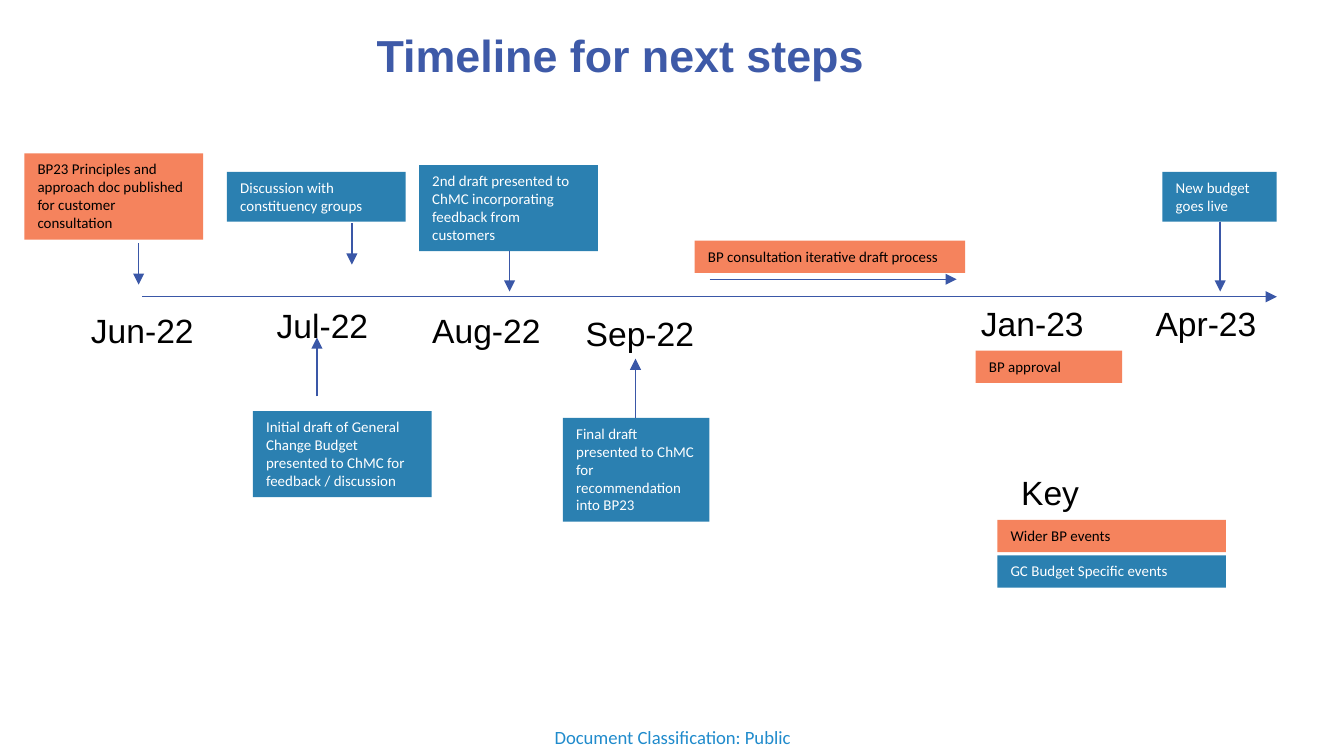
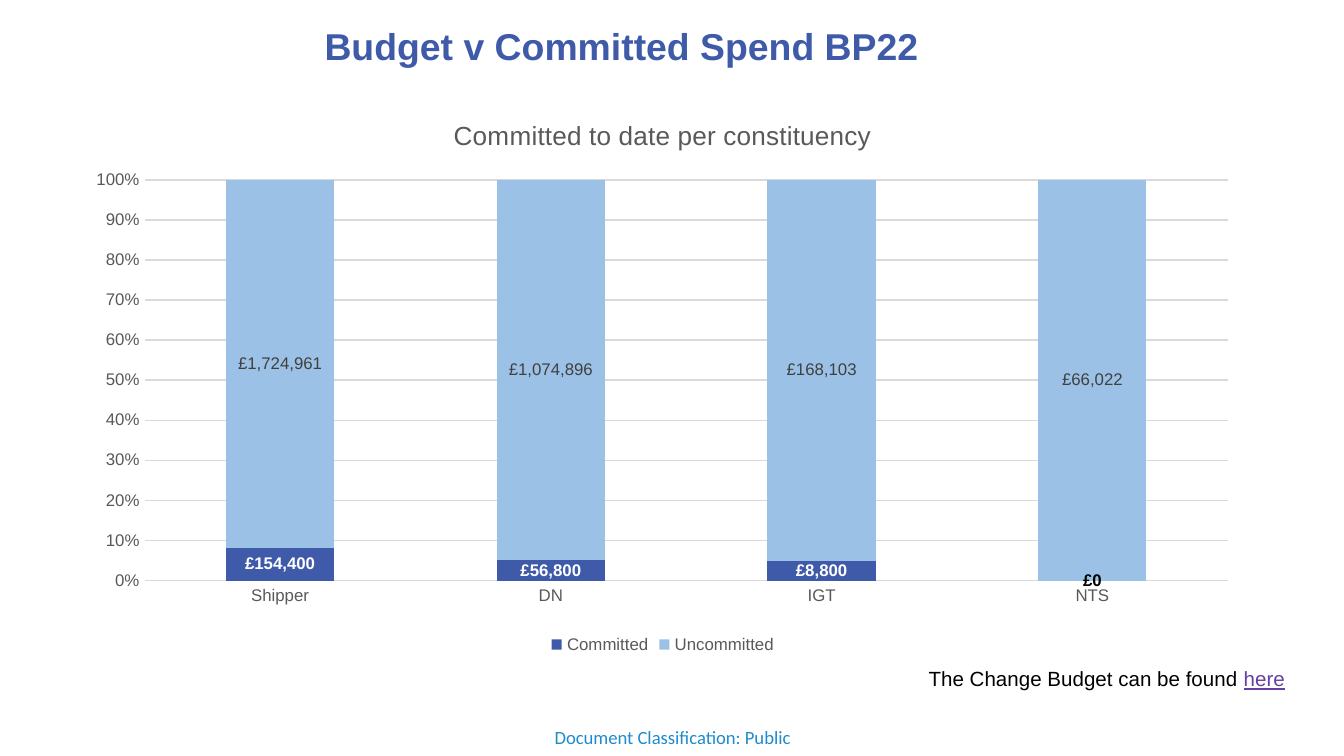
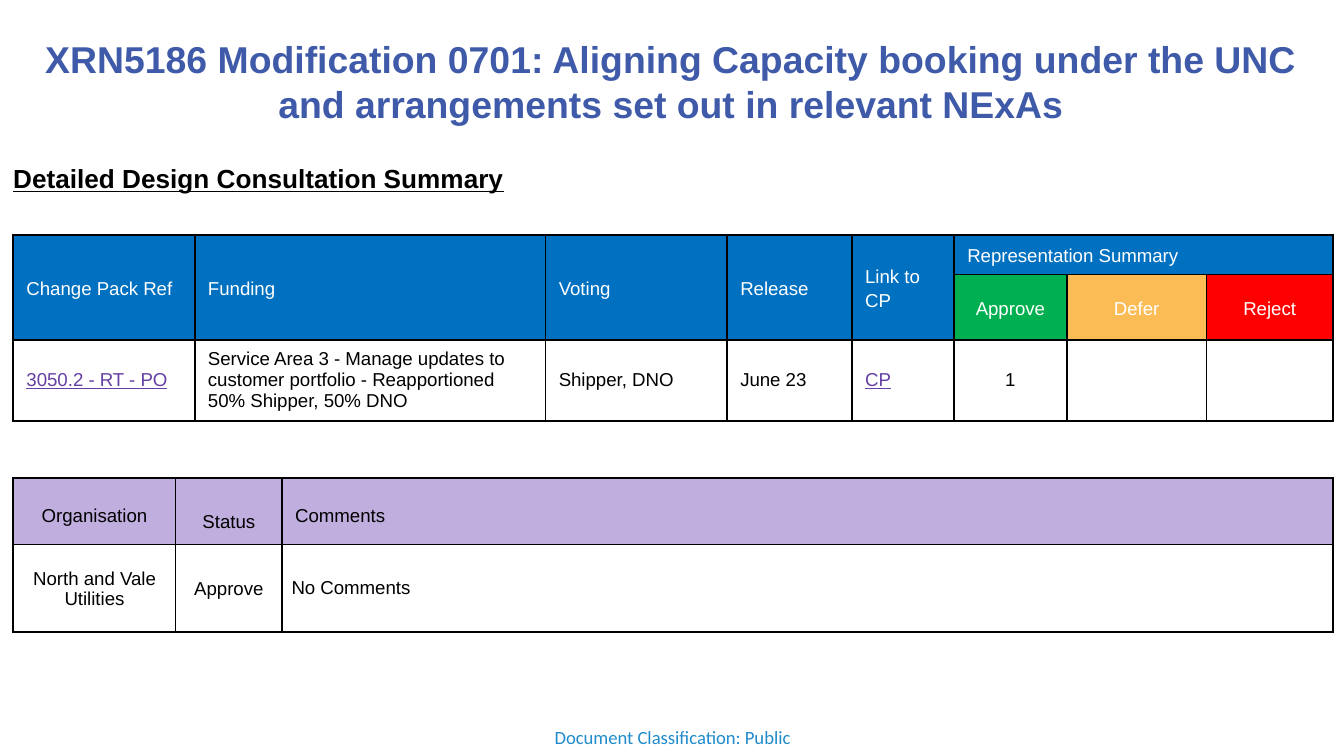
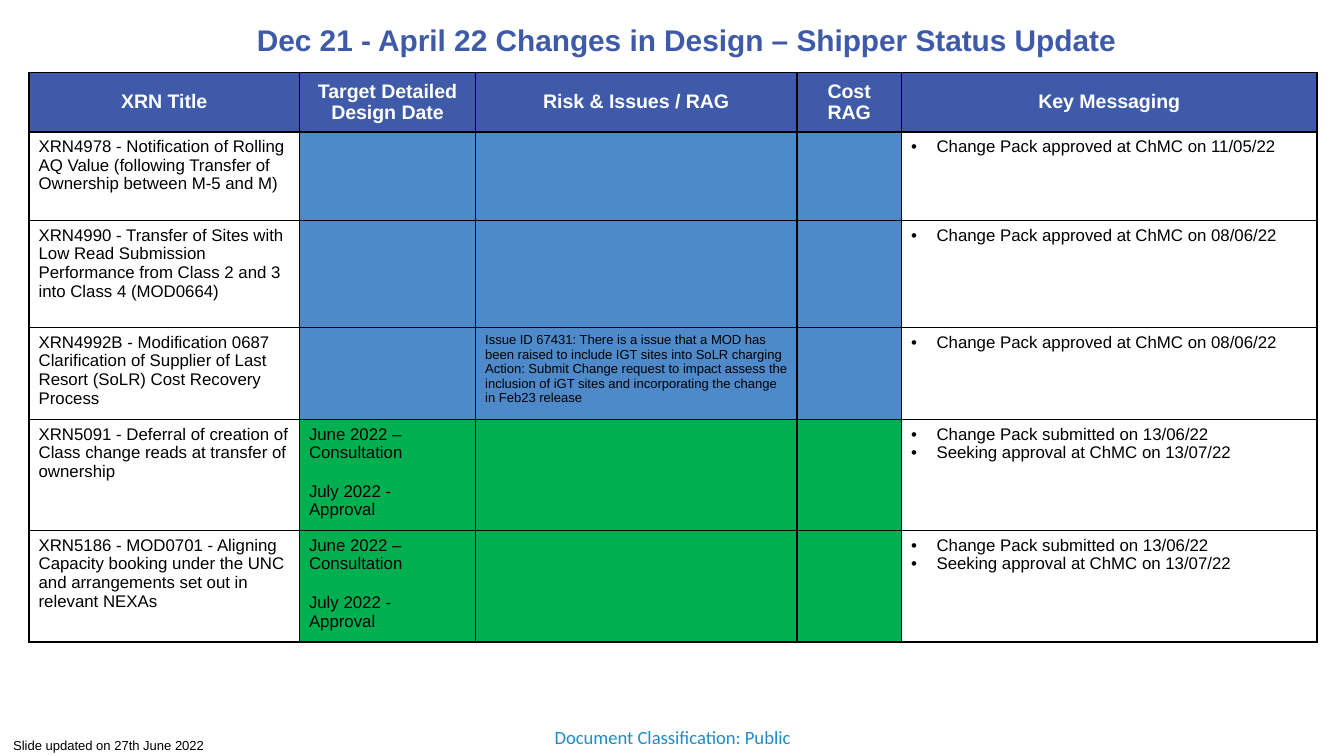
from dataclasses import dataclass, replace

from lxml.etree import SubElement
from pptx import Presentation
from pptx.chart.data import CategoryChartData
from pptx.dml.color import RGBColor
from pptx.enum.chart import XL_CHART_TYPE, XL_LEGEND_POSITION, XL_TICK_MARK
from pptx.enum.shapes import MSO_CONNECTOR, MSO_SHAPE
from pptx.enum.text import MSO_ANCHOR, PP_ALIGN
from pptx.oxml.ns import qn
from pptx.util import Cm, Pt

LEFT, CENTER = PP_ALIGN.LEFT, PP_ALIGN.CENTER
TOP, MIDDLE = MSO_ANCHOR.TOP, MSO_ANCHOR.MIDDLE
RECTANGLE = MSO_SHAPE.RECTANGLE
STRAIGHT = MSO_CONNECTOR.STRAIGHT
STACKED_100 = XL_CHART_TYPE.COLUMN_STACKED_100
LEGEND_BOTTOM = XL_LEGEND_POSITION.BOTTOM
NO_TICK = XL_TICK_MARK.NONE

ARIAL, CALIBRI = "Arial", "Calibri"
BLACK = RGBColor(0x00, 0x00, 0x00)
WHITE = RGBColor(0xFF, 0xFF, 0xFF)
NAVY = RGBColor(0x3E, 0x5A, 0xA8)
ARROW_BLUE = RGBColor(0x3A, 0x57, 0xA7)
FOOTER_BLUE = RGBColor(0x20, 0x8B, 0xCC)
WIDER_ORANGE = RGBColor(0xF5, 0x83, 0x5D)
BUDGET_BLUE = RGBColor(0x2B, 0x80, 0xB1)
PALE_BLUE = RGBColor(0x9B, 0xC2, 0xE6)
GREY = RGBColor(0x59, 0x59, 0x59)
LABEL_GREY = RGBColor(0x40, 0x40, 0x40)
GRID_GREY = RGBColor(0xD9, 0xD9, 0xD9)
LINK_PURPLE = RGBColor(0x64, 0x40, 0xA3)
HEADER_BLUE = RGBColor(0x00, 0x70, 0xC0)
GREEN = RGBColor(0x00, 0xB0, 0x50)
AMBER = RGBColor(0xFC, 0xBC, 0x55)
RED = RGBColor(0xFF, 0x00, 0x00)
LILAC = RGBColor(0xC0, 0xAE, 0xDF)
COMPLETE_BLUE = RGBColor(0x4E, 0x8A, 0xCA)

POUNDS = '"£"#,##0'


@dataclass(frozen=True)
class CellStyle:
    """The look of one table cell; margins are left, top, right, bottom in cm."""
    size: float = 10
    color: RGBColor = BLACK
    fill: RGBColor = WHITE
    bold: bool = False
    underline: bool = False
    align: PP_ALIGN = LEFT
    anchor: MSO_ANCHOR = MIDDLE
    spacing: float = 1.0
    gap: float = 0
    bullet: bool = False
    margins: tuple = (0.25, 0.13, 0.25, 0.13)


def style_font(font, size, color, bold=False, underline=False, name=ARIAL):
    """Set the usual properties of a font."""
    font.name, font.size, font.bold = name, Pt(size), bold
    font.underline = underline
    font.color.rgb = color


def write_text(text_frame, text, size, color, align=LEFT, **font_options):
    """Fill a text frame and format every run."""
    text_frame.text = text
    for paragraph in text_frame.paragraphs:
        paragraph.alignment = align
        for run in paragraph.runs:
            style_font(run.font, size, color, **font_options)


def place(left, top, width, height):
    """Turn a box in centimetres into lengths."""
    return Cm(left), Cm(top), Cm(width), Cm(height)


def add_text(slide, box, text, size, color=BLACK, wrap=True, **options):
    """Add a text box."""
    shape = slide.shapes.add_textbox(*place(*box))
    shape.text_frame.word_wrap = wrap
    write_text(shape.text_frame, text, size, color, **options)
    return shape


def add_event(slide, box, text, fill):
    """Add a filled event box with a small caption."""
    shape = slide.shapes.add_shape(RECTANGLE, *place(*box))
    shape.shadow.inherit = False
    shape.fill.solid()
    shape.fill.fore_color.rgb = fill
    shape.line.fill.background()
    shape.text_frame.vertical_anchor = TOP
    color = BLACK if fill == WIDER_ORANGE else WHITE
    write_text(shape.text_frame, text, 8, color, name=CALIBRI)


def add_arrow(slide, start_x, start_y, end_x, end_y):
    """Add a straight arrow."""
    arrow = slide.shapes.add_connector(
        STRAIGHT, Cm(start_x), Cm(start_y), Cm(end_x), Cm(end_y))
    arrow.line.color.rgb = ARROW_BLUE
    arrow.line.width = Pt(0.75)
    properties = arrow.element.spPr
    SubElement(properties.find(qn("a:ln")), qn("a:tailEnd"), type="triangle")
    SubElement(properties, qn("a:effectLst"))


def add_titled_slide(presentation, title, box, size, anchor=MIDDLE):
    """Add a slide with its title placed and formatted."""
    slide = presentation.slides.add_slide(presentation.slide_layouts[5])
    shape = slide.shapes.title
    shape.left, shape.top, shape.width, shape.height = place(*box)
    shape.text_frame.vertical_anchor = anchor
    write_text(shape.text_frame, title, size, NAVY, CENTER, bold=True)
    return slide


def move_footer_to_master(presentation, slide):
    """Make the classification footer once, on the slide master."""
    footer = add_text(slide, (10.03, 13.56, 5.36, 0.74), "Document Classification: Public",
                      10, FOOTER_BLUE, align=CENTER, name=CALIBRI)
    frame = footer.text_frame
    frame.vertical_anchor = MIDDLE
    frame.margin_left = frame.margin_top = frame.margin_right = frame.margin_bottom = 0
    presentation.slide_master.element.cSld.spTree.append(footer.element)


def add_bullet(paragraph):
    """Give a paragraph a hanging round bullet."""
    properties = paragraph._p.get_or_add_pPr()
    properties.set("marL", str(Cm(0.48)))
    properties.set("indent", str(-Cm(0.48)))
    SubElement(properties, qn("a:buFont"), typeface=ARIAL)
    SubElement(properties, qn("a:buChar"), char="•")


def add_borders(cell):
    """Draw a black line on all four sides of a cell."""
    properties = cell._tc.get_or_add_tcPr()
    for side in ("lnL", "lnR", "lnT", "lnB"):
        line = SubElement(properties, qn("a:" + side), w=str(Pt(1)))
        SubElement(SubElement(line, qn("a:solidFill")), qn("a:srgbClr"), val=str(BLACK))


def fill_cell(cell, text, style):
    """Write and format one table cell."""
    add_borders(cell)
    cell.fill.solid()
    cell.fill.fore_color.rgb = style.fill
    cell.vertical_anchor = style.anchor
    cell.margin_left, cell.margin_top, cell.margin_right, cell.margin_bottom = place(*style.margins)
    write_text(cell.text_frame, text, style.size, style.color, style.align,
               bold=style.bold, underline=style.underline)
    for index, paragraph in enumerate(cell.text_frame.paragraphs):
        paragraph.line_spacing = style.spacing
        if index and style.gap:
            paragraph.space_before = Pt(style.gap)
        if style.bullet:
            add_bullet(paragraph)
        if not paragraph.runs:
            SubElement(paragraph._p, qn("a:endParaRPr"), sz=str(int(style.size * 100)))


def add_grid(slide, left, top, widths, heights, rows):
    """Add a table from rows of (text, style) pairs."""
    frame = slide.shapes.add_table(len(heights), len(widths),
                                   *place(left, top, sum(widths), sum(heights)))
    table = frame.table
    table.first_row = table.horz_banding = False
    for column, width in zip(table.columns, widths):
        column.width = Cm(width)
    for row, height, contents in zip(table.rows, heights, rows):
        row.height = Cm(height)
        for cell, (text, style) in zip(row.cells, contents):
            fill_cell(cell, text, style)
    return table


def draw_timeline(slide, left, top):
    """Draw the axis, months, events and arrows."""
    months = [
        ("Jun-22", 1.01, 2.84), ("Jul-22", 4.52, 2.74), ("Aug-22", 7.46, 2.84),
        ("Sep-22", 10.36, 2.89), ("Jan-23", 17.83, 2.71), ("Apr-23", 21.13, 2.71),
    ]
    events = [
        ("BP23 Principles and approach doc published for customer consultation",
         0, 0, 3.38, 1.63, WIDER_ORANGE),
        ("Initial draft of General Change Budget presented to ChMC for feedback / discussion",
         4.32, 4.87, 3.38, 1.63, BUDGET_BLUE),
        ("Discussion with constituency groups", 3.83, 0.35, 3.38, 0.94, BUDGET_BLUE),
        ("2nd draft presented to ChMC incorporating feedback from customers",
         7.46, 0.22, 3.38, 1.63, BUDGET_BLUE),
        ("Final draft presented to ChMC for recommendation into BP23",
         10.18, 5, 2.77, 1.96, BUDGET_BLUE),
        ("BP consultation iterative draft process", 12.67, 1.65, 5.11, 0.61, WIDER_ORANGE),
        ("BP approval", 17.98, 3.73, 2.77, 0.61, WIDER_ORANGE),
        ("New budget goes live", 21.51, 0.35, 2.16, 0.94, BUDGET_BLUE),
    ]
    horizontal_arrows = [(2.71, 2.23, 23.67), (2.38, 12.95, 17.62)]
    vertical_arrows = [
        (2.16, 1.7, 2.48), (6.19, 1.32, 2.1), (9.17, 1.85, 2.61),
        (22.6, 1.29, 2.61), (5.53, 4.59, 3.48), (11.55, 5, 3.88),
    ]
    for month, x, y in months:
        add_text(slide, (left + x, top + y, 2.92, 1.02), month, 18)
    for text, x, y, width, height, fill in events:
        add_event(slide, (left + x, top + y, width, height), text, fill)
    for y, start, end in horizontal_arrows:
        add_arrow(slide, left + start, top + y, left + end, top + y)
    for x, start, end in vertical_arrows:
        add_arrow(slide, left + x, top + start, left + x, top + end)


def draw_key(slide, left, top):
    """Draw the colour key."""
    add_text(slide, (left + 0.2, top, 2.54, 1.02), "Key", 18)
    entries = [("Wider BP events", WIDER_ORANGE), ("GC Budget Specific events", BUDGET_BLUE)]
    for index, (text, fill) in enumerate(entries):
        add_event(slide, (left, top + 1.04 + index * 0.67, 4.32, 0.61), text, fill)


def fix_plot_area(chart, **fractions):
    """Pin the inner plot area to fractions of the chart."""
    plot_area = chart.element.chart.plotArea
    layout = plot_area.find(qn("c:layout"))
    if layout is None:
        layout = SubElement(plot_area, qn("c:layout"))
        plot_area.insert(0, layout)
    manual = SubElement(layout, qn("c:manualLayout"))
    SubElement(manual, qn("c:layoutTarget"), val="inner")
    for mode in ("xMode", "yMode"):
        SubElement(manual, qn("c:" + mode), val="edge")
    for name, value in fractions.items():
        SubElement(manual, qn("c:" + name), val=str(value))


def style_axes(chart):
    """Format both axes and the gridlines."""
    category_axis, value_axis = chart.category_axis, chart.value_axis
    for axis in (category_axis, value_axis):
        axis.major_tick_mark = axis.minor_tick_mark = NO_TICK
        style_font(axis.tick_labels.font, 9, GREY)
    value_axis.tick_labels.number_format = "0%"
    value_axis.tick_labels.number_format_is_linked = False
    value_axis.format.line.fill.background()
    value_axis.has_major_gridlines = True
    for line in (category_axis.format.line, value_axis.major_gridlines.format.line):
        line.color.rgb = GRID_GREY
        line.width = Pt(0.75)


def draw_spend_chart(slide, box):
    """Draw committed against uncommitted spend for each constituency."""
    data = CategoryChartData(number_format=POUNDS)
    data.categories = ["Shipper", "DN", "IGT", "NTS"]
    data.add_series("Committed", [154400, 56800, 8800, 0])
    data.add_series("Uncommitted", [1724961, 1074896, 168103, 66022])
    chart = slide.shapes.add_chart(STACKED_100, *place(*box), data).chart
    style_font(chart.font, 10, BLACK)
    chart.has_title = True
    write_text(chart.chart_title.text_frame, "Committed to date per constituency",
               14, GREY, CENTER)
    chart.chart_title.include_in_layout = False
    chart.has_legend = True
    chart.legend.position = LEGEND_BOTTOM
    chart.legend.include_in_layout = False
    style_font(chart.legend.font, 9, GREY)
    style_axes(chart)
    plot = chart.plots[0]
    plot.gap_width, plot.overlap = 150, 100
    plot.vary_by_categories = False
    looks = [(NAVY, WHITE, True), (PALE_BLUE, LABEL_GREY, False)]
    for series, (fill, label_color, bold) in zip(plot.series, looks):
        series.format.fill.solid()
        series.format.fill.fore_color.rgb = fill
        labels = series.data_labels
        labels.show_value = True
        labels.number_format = POUNDS
        labels.number_format_is_linked = False
        style_font(labels.font, 9, label_color, bold)
    style_font(plot.series[0].points[3].data_label.font, 9, BLACK, True)
    fix_plot_area(chart, x=0.06, y=0.15, w=0.92, h=0.71)


def draw_consultation_table(slide, left, top):
    """Draw the change pack table with its representation summary."""
    header = CellStyle(color=WHITE, fill=HEADER_BLUE, spacing=1.15)
    body = CellStyle()
    link = replace(body, color=LINK_PURPLE, underline=True)
    centred = replace(body, align=CENTER)
    votes = [(text, replace(header, fill=fill, align=CENTER))
             for text, fill in (("Approve", GREEN), ("Defer", AMBER), ("Reject", RED))]
    headings = ["Change Pack Ref", "Funding", "Voting", "Release", "Link to CP",
                "Representation Summary", "", ""]
    rows = [
        [(text, header) for text in headings],
        [("", header)] * 5 + votes,
        [("3050.2 - RT - PO", link),
         ("Service Area 3 - Manage updates to customer portfolio - "
          "Reapportioned 50% Shipper, 50% DNO", body),
         ("Shipper, DNO", body), ("June 23", body), ("CP", link),
         ("1", centred), ("", centred), ("", centred)],
    ]
    widths = [3.43, 6.63, 3.43, 2.36, 1.93, 2.13, 2.64, 2.39]
    table = add_grid(slide, left, top, widths, [0.74, 1.23, 1.53], rows)
    for column in range(5):
        table.cell(0, column).merge(table.cell(1, column))
    table.cell(0, 5).merge(table.cell(0, 7))


def draw_comments_table(slide, left, top):
    """Draw the table of organisations and their comments."""
    header = CellStyle(fill=LILAC, anchor=TOP, margins=(0.25, 0.52, 0.25, 0.13))
    narrow = CellStyle(align=CENTER, margins=(0.03, 0.03, 0.03, 0))
    rows = [
        [("Organisation", replace(header, align=CENTER)),
         ("Status", replace(header, align=CENTER, margins=(0.15, 0.63, 0.15, 0))),
         ("Comments", header)],
        [("North and Vale Utilities", narrow), ("Approve", narrow),
         ("No Comments", CellStyle(margins=(0.18, 0, 0.18, 0)))],
    ]
    add_grid(slide, left, top, [3.07, 2.01, 19.86], [1.25, 1.66], rows)


def draw_status_table(slide, left, top):
    """Draw the status of each change in design."""
    body = CellStyle(size=9, anchor=TOP, margins=(0.18, 0.1, 0.18, 0.1))
    header = replace(body, size=10.5, color=WHITE, fill=NAVY, bold=True,
                     align=CENTER, anchor=MIDDLE)
    message = replace(body, bullet=True)
    headings = ["XRN Title", "Target Detailed Design Date", "Risk & Issues / RAG",
                "Cost RAG", "Key Messaging"]
    dates = "June 2022 – Consultation\nJuly 2022 - Approval"
    issue = ("Issue ID 67431: There is a issue that a MOD has been raised to include IGT sites "
             "into SoLR charging\nAction: Submit Change request to impact assess the inclusion "
             "of iGT sites and incorporating the change in Feb23 release")
    submitted = "Change Pack submitted on 13/06/22\nSeeking approval at ChMC on 13/07/22"
    approved = "Change Pack approved at ChMC on "
    changes = [
        ("XRN4978 - Notification of Rolling AQ Value (following Transfer of Ownership "
         "between M-5 and M)", "", "", COMPLETE_BLUE, approved + "11/05/22"),
        ("XRN4990 - Transfer of Sites with Low Read Submission Performance from Class 2 "
         "and 3 into Class 4 (MOD0664)", "", "", COMPLETE_BLUE, approved + "08/06/22"),
        ("XRN4992B - Modification 0687 Clarification of Supplier of Last Resort (SoLR) "
         "Cost Recovery Process", "", issue, COMPLETE_BLUE, approved + "08/06/22"),
        ("XRN5091 - Deferral of creation of Class change reads at transfer of ownership",
         dates, "", GREEN, submitted),
        ("XRN5186 - MOD0701 - Aligning Capacity booking under the UNC and arrangements "
         "set out in relevant NEXAs", dates, "", GREEN, submitted),
    ]
    rows = [[(text, header) for text in headings]]
    for title, date, risk, fill, messages in changes:
        status = replace(body, fill=fill)
        date_style = replace(status, gap=10.4, margins=(0.18, 0.1, 0.4, 0.1))
        rows.append([(title, body), (date, date_style), (risk, replace(status, size=7)),
                     ("", status), (messages, message)])
    add_grid(slide, left, top, [5.11, 3.33, 6.07, 1.98, 7.85],
             [1.12, 1.68, 2.02, 1.74, 2.1, 2.1], rows)


def build_timeline_slide(presentation):
    """Build the next steps slide."""
    slide = add_titled_slide(presentation, "Timeline for next steps",
                             (1.22, 0.4, 21, 1.12), 24, TOP)
    draw_timeline(slide, 0.46, 2.9)
    draw_key(slide, 18.85, 8.79)
    return slide


def build_budget_slide(presentation):
    """Build the budget chart slide."""
    slide = add_titled_slide(presentation, "Budget v Committed Spend BP22",
                             (-0.5, 0.3, 24.5, 1.14), 20)
    draw_spend_chart(slide, (1.4, 1.8, 22.25, 10.67))
    note = add_text(slide, (17.3, 12.47, 7.6, 0.74), "The Change Budget can be found ", 11)
    link = note.text_frame.paragraphs[0].add_run()
    link.text = "here"
    style_font(link.font, 11, LINK_PURPLE, underline=True)


def build_consultation_slide(presentation):
    """Build the design consultation slide."""
    slide = add_titled_slide(
        presentation, "XRN5186 Modification 0701: Aligning Capacity booking under the UNC "
        "and arrangements set out in relevant NExAs", (0.15, 0.74, 25.07, 1.57), 20)
    add_text(slide, (0, 2.95, 12.12, 0.86), "Detailed Design Consultation Summary", 14,
             bold=True, underline=True)
    draw_consultation_table(slide, 0.25, 4.44)
    draw_comments_table(slide, 0.25, 9.04)


def build_status_slide(presentation):
    """Build the shipper status slide."""
    slide = add_titled_slide(
        presentation, "Dec 21 - April 22 Changes in Design – Shipper Status Update",
        (1.55, -0.15, 22.86, 1.78), 16)
    draw_status_table(slide, 0.55, 1.37)
    add_text(slide, (0, 13.82, 4.29, 0.56), "Slide updated on 27th June 2022", 7, wrap=False)


def main():
    """Build and save the presentation."""
    presentation = Presentation()
    presentation.slide_width, presentation.slide_height = Cm(25.4), Cm(14.29)
    timeline_slide = build_timeline_slide(presentation)
    move_footer_to_master(presentation, timeline_slide)
    build_budget_slide(presentation)
    build_consultation_slide(presentation)
    build_status_slide(presentation)
    presentation.save("out.pptx")


if __name__ == "__main__":
    main()
